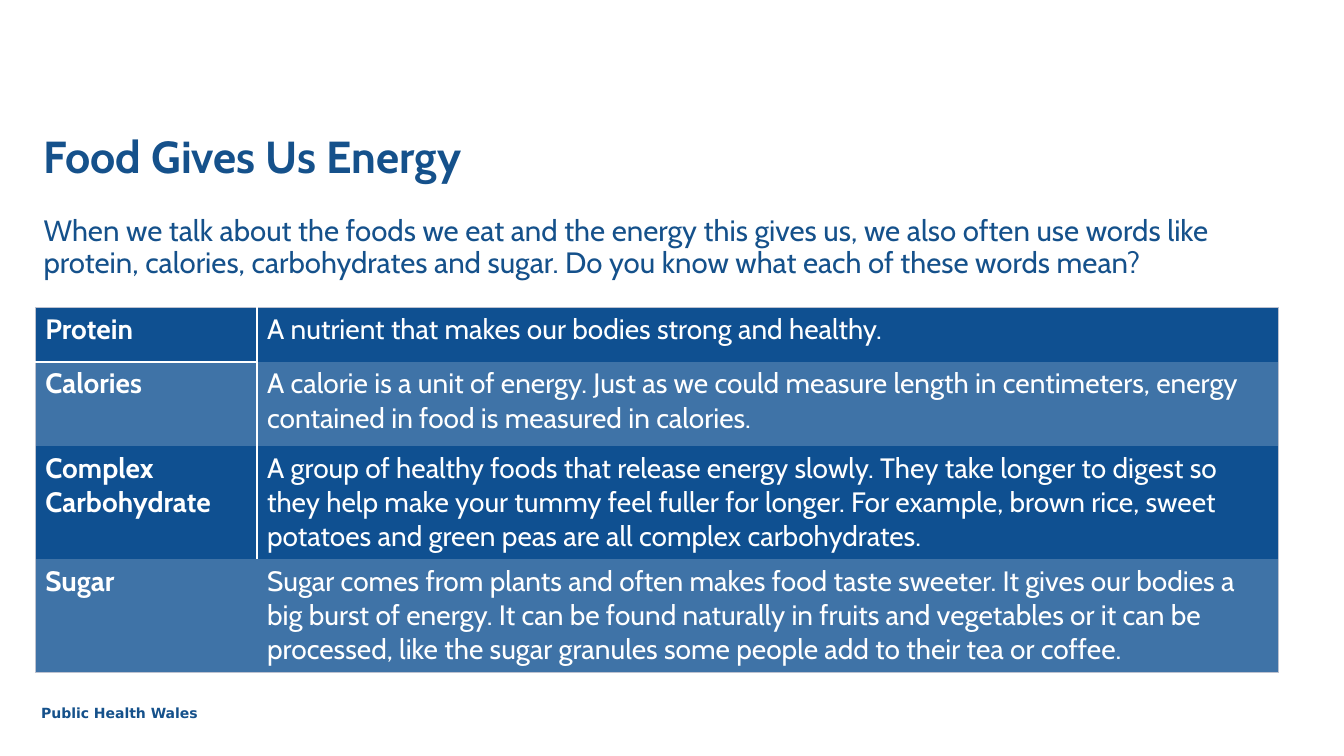
from lxml.etree import SubElement
from pptx import Presentation
from pptx.dml.color import RGBColor
from pptx.enum.text import MSO_ANCHOR as Anchor
from pptx.oxml.ns import qn
from pptx.util import Inches, Pt

WIDTH, HEIGHT = Inches(13.33), Inches(7.5)
COLUMN, ROW = WIDTH / 40, HEIGHT / 30
COLORS = {
    "heading": "15518B",
    "dark": "0F5091",
    "light": "3F73A7",
    "white": "FFFFFF",
    "edge": "BDC2D0",
}
TERM_COLUMNS = (6.6, 30.39)
TERM_ROWS = (2.16, 3.36, 4.48, 4.48)
INTRO = (
    "When we talk about the foods we eat and the energy this gives us, "
    "we also often use words like protein, calories, carbohydrates and sugar. "
    "Do you know what each of these words mean?"
)
TERMS = [
    ("Protein", "A nutrient that makes our bodies strong and healthy."),
    (
        "Calories",
        "A calorie is a unit of energy. Just as we could measure length in "
        "centimeters, energy contained in food is measured in calories.",
    ),
    (
        "Complex\nCarbohydrate",
        "A group of healthy foods that release energy slowly. They take longer "
        "to digest so they help make your tummy feel fuller for longer. "
        "For example, brown rice, sweet potatoes and green peas are all "
        "complex carbohydrates.",
    ),
    (
        "Sugar",
        "Sugar comes from plants and often makes food taste sweeter. It gives "
        "our bodies a big burst of energy. It can be found naturally in fruits "
        "and vegetables or it can be processed, like the sugar granules some "
        "people add to their tea or coffee.",
    ),
]


def grid(left, top, width, height):
    """Turn grid columns and rows into slide lengths."""
    return (round(left * COLUMN), round(top * ROW),
            round(width * COLUMN), round(height * ROW))


def write(frame, text, size, color, bold=False, family="Cabin", spacing=None):
    """Fill a text frame with evenly formatted paragraphs."""
    frame.word_wrap = True
    frame.text = text
    for paragraph in frame.paragraphs:
        paragraph.line_spacing = spacing
        font = paragraph.font
        font.name, font.size, font.bold = family, Pt(size), bold
        font.color.rgb = RGBColor.from_string(COLORS[color])


def add_title(slide, text, area):
    """Place and format the slide title."""
    title = slide.shapes.title
    title.left, title.top, title.width, title.height = area
    write(title.text_frame, text, 32, "heading", True, spacing=0.9)
    title.text_frame.vertical_anchor = Anchor.BOTTOM
    title.text_frame.paragraphs[0].alignment = 1


def add_text(slide, text, area, size, **style):
    """Add a text box in the heading colour."""
    box = slide.shapes.add_textbox(*area)
    write(box.text_frame, text, size, "heading", **style)


def set_borders(cell, borders):
    """Draw the given cell sides and clear the others."""
    properties = cell._tc.get_or_add_tcPr()
    for side in "LRTB":
        color, points = borders.get(side, (None, 0))
        line = SubElement(properties, qn(f"a:ln{side}"), w=str(Pt(points)))
        if color:
            fill = SubElement(line, qn("a:solidFill"))
            SubElement(fill, qn("a:srgbClr"), val=COLORS[color])
        else:
            SubElement(line, qn("a:noFill"))


def term_borders(row, column):
    """Choose the lines around one cell of the term table."""
    last = len(TERMS) - 1
    borders = {"R": ("edge", 0.5)} if column else {"L": ("edge", 0.5)}
    if row == 0:
        borders["T"] = ("edge", 0.5)
    if row == last:
        borders["B"] = ("edge", 0.5)
    else:
        borders["L" if column else "R"] = ("white", 1)
    if column == 0 and row < 2:
        borders["T" if row else "B"] = ("white", 1.5)
    return borders


def add_terms(slide, left, top):
    """Add the table of terms and their meanings."""
    area = grid(left, top, sum(TERM_COLUMNS), sum(TERM_ROWS))
    table = slide.shapes.add_table(len(TERMS), len(TERM_COLUMNS), *area).table
    table.first_row = table.horz_banding = False
    for column, share in zip(table.columns, TERM_COLUMNS):
        column.width = round(share * COLUMN)
    for row, share in zip(table.rows, TERM_ROWS):
        row.height = round(share * ROW)
    for row, term in enumerate(TERMS):
        for column, text in enumerate(term):
            cell = table.cell(row, column)
            write(cell.text_frame, text, 20, "white", column == 0)
            set_borders(cell, term_borders(row, column))
            cell.fill.solid()
            shade = COLORS["light" if row % 2 else "dark"]
            cell.fill.fore_color.rgb = RGBColor.from_string(shade)


def main():
    """Build the slide and save it."""
    deck = Presentation()
    deck.slide_width, deck.slide_height = WIDTH, HEIGHT
    slide = deck.slides.add_slide(deck.slide_layouts[5])
    add_text(slide, "Public Health Wales", grid(0.93, 27.76, 5.43, 1.08), 10,
             bold=True, family="DejaVu Sans")
    add_title(slide, "Food Gives Us Energy", grid(1, 4.56, 14.55, 2.92))
    add_text(slide, INTRO, grid(1, 8.4, 37.86, 2.4), 21, spacing=0.9)
    add_terms(slide, 1.05, 12.2)
    deck.save("out.pptx")


if __name__ == "__main__":
    main()
